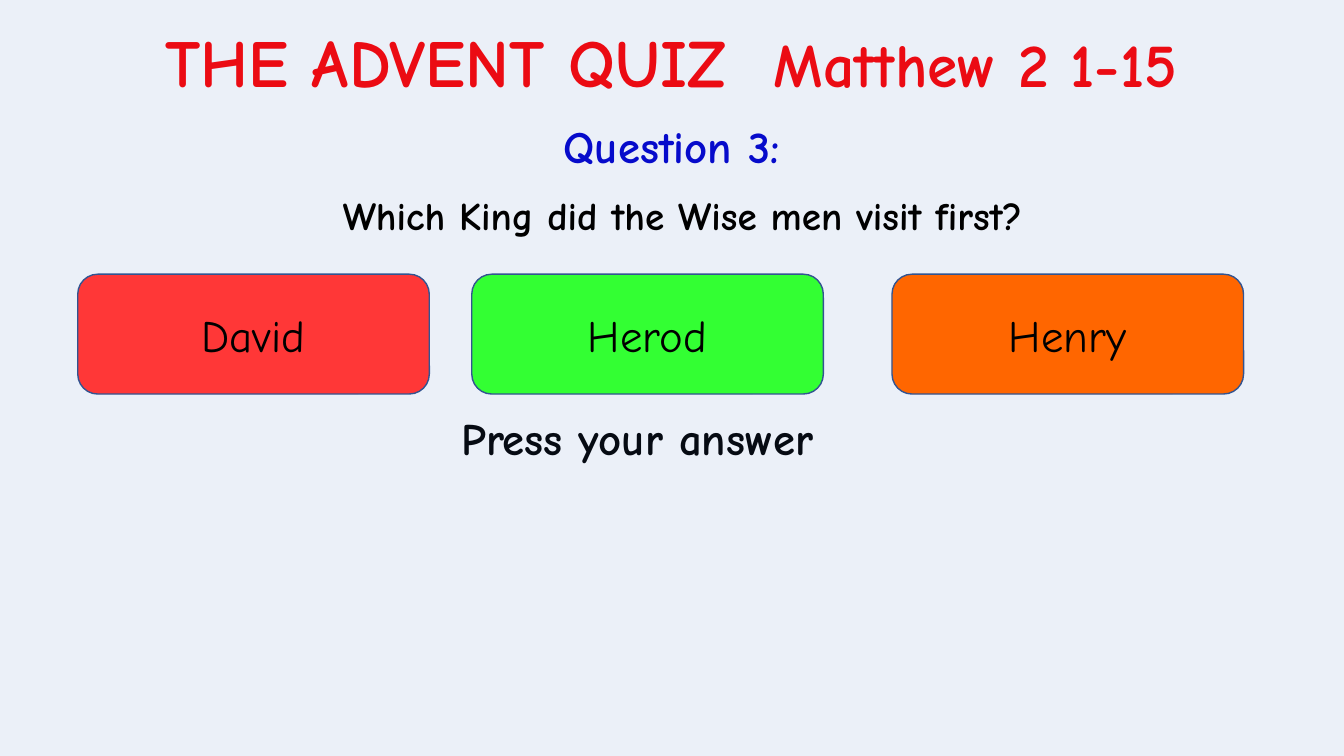
from lxml.etree import SubElement
from pptx import Presentation
from pptx.dml.color import RGBColor
from pptx.enum.shapes import MSO_SHAPE as Shape
from pptx.enum.text import MSO_ANCHOR as Anchor, MSO_AUTO_SIZE as AutoSize, PP_ALIGN as Align
from pptx.oxml.ns import qn
from pptx.util import Cm, Pt

RED = RGBColor(0xFF, 0x00, 0x00)
BLUE = RGBColor(0x00, 0x00, 0xCC)
BLACK = RGBColor(0x00, 0x00, 0x00)
TINT = RGBColor(0x44, 0x72, 0xC4)
BORDER = RGBColor(0x32, 0x54, 0x91)
CORAL = RGBColor(0xFF, 0x37, 0x37)
GREEN = RGBColor(0x33, 0xFF, 0x33)
ORANGE = RGBColor(0xFF, 0x66, 0x00)


class QuizPage:
    """Holds the quiz style and the slide being built."""

    font_name = "Comic Neue"

    def __init__(self, deck):
        self.page = deck.slides.add_slide(deck.slide_layouts[5])

    def fill_text(self, box, spans, color=BLACK, bold=True, anchor=Anchor.TOP, wrap=True,
                  **format_values):
        frame = box.text_frame
        frame.auto_size = AutoSize.NONE
        frame.word_wrap = wrap
        frame.vertical_anchor = anchor
        para = frame.paragraphs[0]
        for name, value in ({"alignment": Align.CENTER} | format_values).items():
            setattr(para, name, value)
        for text, size in spans:
            span = para.add_run()
            span.text = text
            span.font.color.rgb = color
            values = {"name": self.font_name, "size": Pt(size), "bold": bold}
            for name, value in values.items():
                setattr(span.font, name, value)

    def title(self, place, spans, color):
        box = self.page.shapes.title
        for name, value in zip(("left", "top", "width", "height"), place):
            setattr(box, name, Cm(value))
        self.fill_text(box, spans, color, wrap=False)

    def text(self, place, text, size, **format_values):
        box = self.page.shapes.add_textbox(*map(Cm, place))
        self.fill_text(box, [(text, size)], **format_values)

    def shape(self, kind, place, fill, opacity=None):
        box = self.page.shapes.add_shape(kind, *map(Cm, place))
        box.shadow.inherit = False
        box.fill.solid()
        box.fill.fore_color.rgb = fill
        box.line.color.rgb = BORDER
        box.line.width = Pt(1)
        if opacity is not None:
            color = box.element.spPr.find(qn("a:solidFill"))[0]
            SubElement(color, qn("a:alpha"), val=str(opacity * 1000))
        return box

    def answer(self, left, text, fill):
        box = self.shape(Shape.ROUNDED_RECTANGLE, (left, 6.91, 8.86, 3.02), fill)
        self.fill_text(box, [(text, 32)], bold=False, anchor=Anchor.MIDDLE)


def main():
    deck = Presentation()
    deck.slide_width, deck.slide_height = Cm(33.87), Cm(19.05)
    quiz = QuizPage(deck)

    # Headings and prompt
    quiz.title((0.94, 0.38, 31.95, 2.31),
               [("THE ADVENT QUIZ  ", 48), ("Matthew 2 1-15", 44)], RED)
    quiz.text((11.38, 10.39, 17.09, 1.83), "Press your answer", 32,
              alignment=Align.LEFT, line_spacing=0.9, space_before=Pt(7.5))
    quiz.text((11.33, 2.87, 11.2, 1.63), "Question 3:", 32, color=BLUE)

    # Pale tint over the whole page
    quiz.shape(Shape.RECTANGLE, (-1.19, -1.55, 36.04, 22.17), TINT, opacity=10)

    # Answer buttons
    for left, text, fill in ((1.96, "David", CORAL),
                             (11.89, "Herod", GREEN),
                             (22.48, "Henry", ORANGE)):
        quiz.answer(left, text, fill)

    # Question
    quiz.text((1.96, 4.6, 30.48, 3.02), "Which King did the Wise men visit first?", 28,
              line_spacing=Pt(36), space_before=Pt(10))

    deck.save("out.pptx")


if __name__ == "__main__":
    main()
